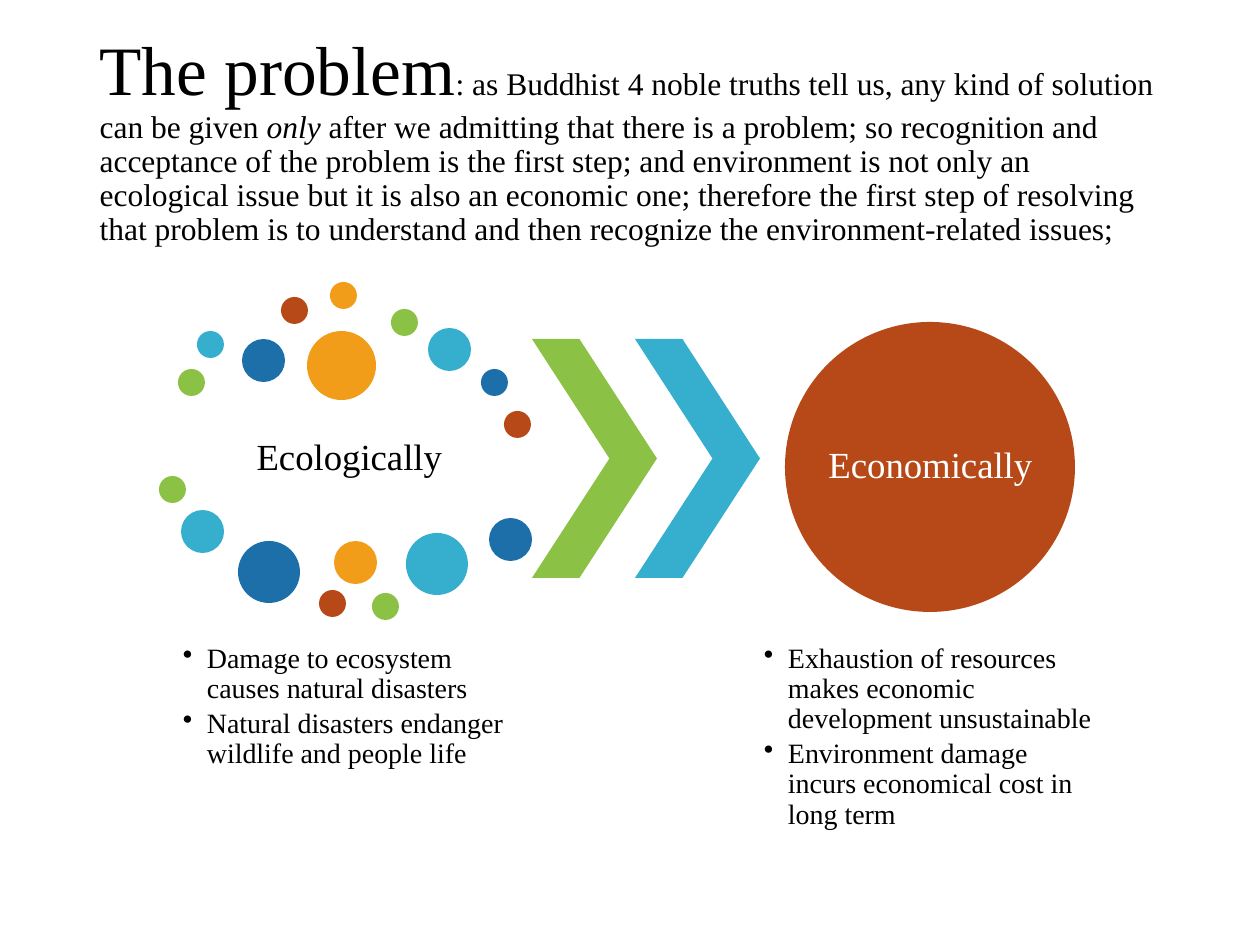
"""Build a slide that sets the ecological and economic sides of the problem side by side."""
import dataclasses
import itertools

import lxml.etree
import pptx
import pptx.dml.color
import pptx.enum.shapes
import pptx.enum.text
import pptx.oxml.ns
import pptx.util

SHAPE = pptx.enum.shapes.MSO_SHAPE
ALIGN = pptx.enum.text.PP_ALIGN
ANCHOR = pptx.enum.text.MSO_ANCHOR


@dataclasses.dataclass(frozen=True)
class Theme:
    font: str = "Times New Roman"
    black: str = "000000"
    white: str = "FFFFFF"
    green: str = "8BC145"
    cyan: str = "36AFCE"
    blue: str = "1D6FA9"
    rust: str = "B74919"
    orange: str = "F19D19"
    title_size: float = 39.6
    lead_size: float = 18
    label_size: float = 21
    bullet_size: float = 16
    line_spacing: float = 0.9
    bullet_gap: float = 2.8


class SlideBuilder:
    def __init__(self, presentation, theme):
        self.theme = theme
        self.slide = presentation.slides.add_slide(presentation.slide_layouts[5])

    @staticmethod
    def px(value):
        return pptx.util.Emu(round(value * 914400 / 126))

    def box(self, *lengths):
        return [self.px(length) for length in lengths]

    def run(self, paragraph, text, size, color, italic=None):
        run = paragraph.add_run()
        run.text = text
        run.font.name = self.theme.font
        run.font.size = pptx.util.Pt(size)
        run.font.italic = italic
        run.font.color.rgb = pptx.dml.color.RGBColor.from_string(color)

    def title(self, left, top, width, height, runs):
        shape = self.slide.shapes.title
        shape.left, shape.top, shape.width, shape.height = self.box(left, top, width, height)
        frame = shape.text_frame
        frame.auto_size = pptx.enum.text.MSO_AUTO_SIZE.NONE
        frame.vertical_anchor = ANCHOR.MIDDLE
        paragraph = frame.paragraphs[0]
        paragraph.alignment = ALIGN.LEFT
        paragraph.line_spacing = self.theme.line_spacing
        for text, size, italic in runs:
            self.run(paragraph, text, size, self.theme.black, italic)

    def shape(self, kind, left, top, width, height, color, adjustment=None):
        shape = self.slide.shapes.add_shape(kind, *self.box(left, top, width, height))
        shape.shadow.inherit = False
        shape.fill.solid()
        shape.fill.fore_color.rgb = pptx.dml.color.RGBColor.from_string(color)
        shape.line.fill.background()
        if adjustment is not None:
            shape.adjustments[0] = adjustment

    def text_frame(self, left, top, width, height, anchor, inset):
        frame = self.slide.shapes.add_textbox(*self.box(left, top, width, height)).text_frame
        frame.word_wrap = True
        frame.vertical_anchor = anchor
        frame.margin_left = frame.margin_right = self.px(inset)
        frame.margin_top = frame.margin_bottom = self.px(inset)
        return frame

    def label(self, left, top, width, height, text, color, inset):
        frame = self.text_frame(left, top, width, height, ANCHOR.MIDDLE, inset)
        paragraph = frame.paragraphs[0]
        paragraph.alignment = ALIGN.CENTER
        paragraph.line_spacing = self.theme.line_spacing
        self.run(paragraph, text, self.theme.label_size, color)

    def bullets(self, left, top, width, height, items):
        frame = self.text_frame(left, top, width, height, ANCHOR.TOP, 4)
        for index, item in enumerate(items):
            paragraph = frame.add_paragraph() if index else frame.paragraphs[0]
            paragraph.level = 1
            paragraph.line_spacing = self.theme.line_spacing
            paragraph.space_after = pptx.util.Pt(self.theme.bullet_gap)
            properties = paragraph._p.get_or_add_pPr()
            properties.set("marL", str(self.px(24)))
            properties.set("indent", str(self.px(-24)))
            bullet = lxml.etree.SubElement(properties, pptx.oxml.ns.qn("a:buChar"))
            bullet.set("char", "•")
            self.run(paragraph, item, self.theme.bullet_size, self.theme.black)


def main():
    theme = Theme()
    presentation = pptx.Presentation()
    presentation.slide_width = SlideBuilder.px(1260)
    presentation.slide_height = SlideBuilder.px(945)
    builder = SlideBuilder(presentation, theme)

    builder.title(87, 50, 1086, 183, [
        ("The problem", theme.title_size, None),
        (": as Buddhist 4 noble truths tell us, any kind of solution can be given ",
         theme.lead_size, None),
        ("only", theme.lead_size, True),
        (" after we admitting that there is a problem; so recognition and acceptance of the "
         "problem is the first step; and environment is not only an ecological issue but it is "
         "also an economic one; therefore the first step of resolving that problem is to "
         "understand and then recognize the environment-related issues;",
         theme.lead_size, None),
    ])

    builder.label(179, 403, 341, 112, "Ecologically", theme.black, 4)
    small, medium, large, largest = 27, 43, 62, 69
    dots = [
        (178, 369, small), (197, 331, small), (242, 339, medium), (281, 297, small),
        (330, 282, small), (391, 309, small), (428, 328, medium), (481, 369, small),
        (504, 411, small), (307, 331, largest), (159, 476, small), (181, 510, medium),
        (238, 541, large), (319, 590, small), (334, 541, medium), (372, 593, small),
        (406, 533, large), (489, 518, medium),
    ]
    palette = [theme.green, theme.cyan, theme.blue, theme.rust, theme.orange]
    for (left, top, size), color in zip(dots, itertools.cycle(palette)):
        builder.shape(SHAPE.OVAL, left, top, size, size, color)

    for left, color in ((532, theme.green), (635, theme.cyan)):
        builder.shape(SHAPE.CHEVRON, left, 339, 125, 239, color, 0.62)

    builder.shape(SHAPE.OVAL, 785, 322, 290, 290, theme.rust)
    builder.label(828, 364, 205, 205, "Economically", theme.white, 0)

    columns = [
        (179, ["Damage to ecosystem causes natural disasters",
               "Natural disasters endanger wildlife and people life"]),
        (760, ["Exhaustion of resources makes economic development unsustainable",
               "Environment damage incurs economical cost in long term"]),
    ]
    for left, items in columns:
        builder.bullets(left, 640, 341, 210, items)

    presentation.save("out.pptx")


if __name__ == "__main__":
    main()
